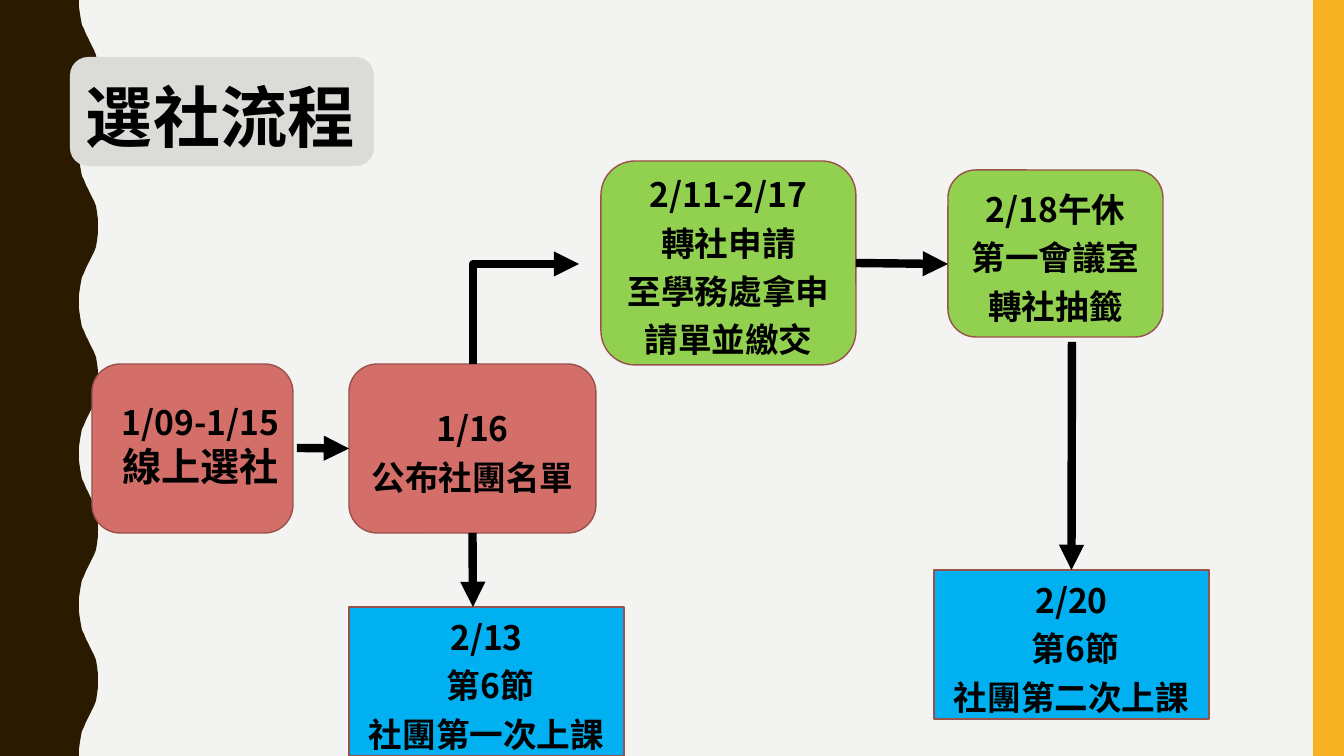
from lxml import etree
from pptx import Presentation
from pptx.dml.color import RGBColor
from pptx.enum.shapes import MSO_CONNECTOR, MSO_SHAPE
from pptx.enum.text import MSO_ANCHOR, PP_ALIGN
from pptx.oxml.ns import qn
from pptx.util import Pt

RECTANGLE, ROUNDED = MSO_SHAPE.RECTANGLE, MSO_SHAPE.ROUNDED_RECTANGLE
STRAIGHT, ELBOW = MSO_CONNECTOR.STRAIGHT, MSO_CONNECTOR.ELBOW
CENTER, LEFT = PP_ALIGN.CENTER, PP_ALIGN.LEFT
TOP, MIDDLE = MSO_ANCHOR.TOP, MSO_ANCHOR.MIDDLE
TOP_SIDE, LEFT_SIDE, BOTTOM_SIDE, RIGHT_SIDE = range(4)

SCALE = 914400 / 100.8
WIDTH, HEIGHT = 1344, 756
CJK_FONT, TITLE_FONT = "Noto Sans CJK TC", "Cabin"
COLORS = {
    "background": "F3F3F2", "wave": "2A1A00", "stripe": "F8B323",
    "title": "DBDBD8", "red": "D36F68", "green": "92D050",
    "blue": "00B0F0", "outline": "99514B", "black": "000000",
}

STRIPE = (1313, 0, 31, HEIGHT)
WAVE_COUNT = 5
HALF_WAVE = [
    (79, 0), (79, 7), (80, 14), (81, 20), (82, 25), (84, 29), (86, 34), (88, 38),
    (90, 42), (92, 46), (94, 50), (96, 55), (97, 61), (98, 69), (98, 76),
]
STEPS = {
    "select": ((92, 364, 201, 169), "red", 0.167, []),
    "announce": ((349, 364, 247, 169), "red", 0.167, ["1/16", "公布社團名單"]),
    "transfer": ((601, 161, 255, 204), "green", 0.167,
                 ["2/11-2/17", "轉社申請", "至學務處拿申請單並繳交"]),
    "draw": ((948, 170, 215, 167), "green", 0.167, ["2/18午休", "第一會議室", "轉社抽籤"]),
    "first class": ((349, 607, 275, 149), "blue", 0, ["2/13", " 第6節", "社團第一次上課"]),
    "second class": ((934, 570, 275, 149), "blue", 0, ["2/20", " 第6節", "社團第二次上課"]),
}
SELECT_TEXT = ((103, 397, 195, 99), [("1/09-1/15", 24), ("線上選社", 28)])
TITLE_PANEL = (70, 57, 304, 109)
TITLE_TEXT = ((76, 70, 337, 92), [("選社流程", 48)])
ARROWS = [
    ((297, 448), (349, 448), None, ("announce", LEFT_SIDE)),
    ((473, 533), (473, 607), ("announce", BOTTOM_SIDE), None),
    ((856, 263), (948, 264), ("transfer", RIGHT_SIDE), None),
    ((1072, 342), (1072, 570), None, ("second class", TOP_SIDE)),
]
ELBOW_START, ELBOW_END = (473, 364), (579, 264)


def emu(*lengths):
    return [round(length * SCALE) for length in lengths]


def color(name):
    return RGBColor.from_string(COLORS[name])


def paint(shape, fill, outline=None):
    shape.shadow.inherit = False
    shape.fill.solid()
    shape.fill.fore_color.rgb = color(fill)
    if outline:
        shape.line.color.rgb = color(outline)
        shape.line.width = Pt(1)
    else:
        shape.line.fill.background()


def add_box(slide, kind, box, fill, outline=None, corner=None):
    shape = slide.shapes.add_shape(kind, *emu(*box))
    if corner is not None:
        shape.adjustments[0] = corner
    paint(shape, fill, outline)
    return shape


def write(shape, lines, alignment=CENTER, anchor=MIDDLE, spacing=1.2, font_name=CJK_FONT):
    frame = shape.text_frame
    frame.word_wrap = True
    frame.vertical_anchor = anchor
    for index, (text, size) in enumerate(lines):
        paragraph = frame.add_paragraph() if index else frame.paragraphs[0]
        paragraph.alignment = alignment
        paragraph.line_spacing = spacing
        run = paragraph.add_run()
        run.text = text
        for name, value in {"name": font_name, "size": Pt(size), "bold": True}.items():
            setattr(run.font, name, value)
        run.font.color.rgb = color("black")
        etree.SubElement(run.font._element, qn("a:ea"), typeface=CJK_FONT)


def add_arrow(slide, kind, start, end):
    arrow = slide.shapes.add_connector(kind, *emu(*start, *end))
    arrow.line.color.rgb = color("black")
    arrow.line.width = Pt(6)
    etree.SubElement(arrow.line._get_or_add_ln(), qn("a:tailEnd"), type="triangle")
    etree.SubElement(arrow._element.spPr, qn("a:effectLst"))
    return arrow


def add_elbow(slide, start, end):
    rise, run = start[1] - end[1], end[0] - start[0]
    left = (start[0] + end[0] - rise) / 2
    top = (start[1] + end[1] - run) / 2
    arrow = add_arrow(slide, ELBOW, (left, top), (left + rise, top + run))
    properties = arrow._element.spPr
    properties.find(qn("a:xfrm")).set("rot", str(270 * 60000))
    properties.find(qn("a:prstGeom")).set("prst", "bentConnector2")


def add_wave(slide):
    period = HEIGHT / WAVE_COUNT
    cycle = HALF_WAVE + [(x, period - y) for x, y in reversed(HALF_WAVE[:-1])]
    edge = [(x, y + wave * period) for wave in range(WAVE_COUNT) for x, y in cycle]
    builder = slide.shapes.build_freeform(0, 0, scale=SCALE)
    builder.add_line_segments(edge + [(0, HEIGHT)], close=True)
    paint(builder.convert_to_shape(), "wave")


def main():
    presentation = Presentation()
    presentation.slide_width, presentation.slide_height = emu(WIDTH, HEIGHT)
    slide = presentation.slides.add_slide(presentation.slide_layouts[6])
    slide.background.fill.solid()
    slide.background.fill.fore_color.rgb = color("background")
    add_wave(slide)
    add_box(slide, RECTANGLE, STRIPE, "stripe")

    steps = {}
    for name, (box, fill, corner, lines) in STEPS.items():
        steps[name] = add_box(slide, ROUNDED, box, fill, "outline", corner)
        write(steps[name], [(line, 24) for line in lines])
    box, lines = SELECT_TEXT
    write(slide.shapes.add_textbox(*emu(*box)), lines, anchor=TOP, spacing=1.0)

    for start, end, source, target in ARROWS:
        arrow = add_arrow(slide, STRAIGHT, start, end)
        if source:
            arrow.begin_connect(steps[source[0]], source[1])
        if target:
            arrow.end_connect(steps[target[0]], target[1])
    add_elbow(slide, ELBOW_START, ELBOW_END)

    add_box(slide, ROUNDED, TITLE_PANEL, "title", corner=0.167)
    box, lines = TITLE_TEXT
    write(slide.shapes.add_textbox(*emu(*box)), lines, LEFT, TOP, 1.0, TITLE_FONT)
    presentation.save("out.pptx")


if __name__ == "__main__":
    main()
